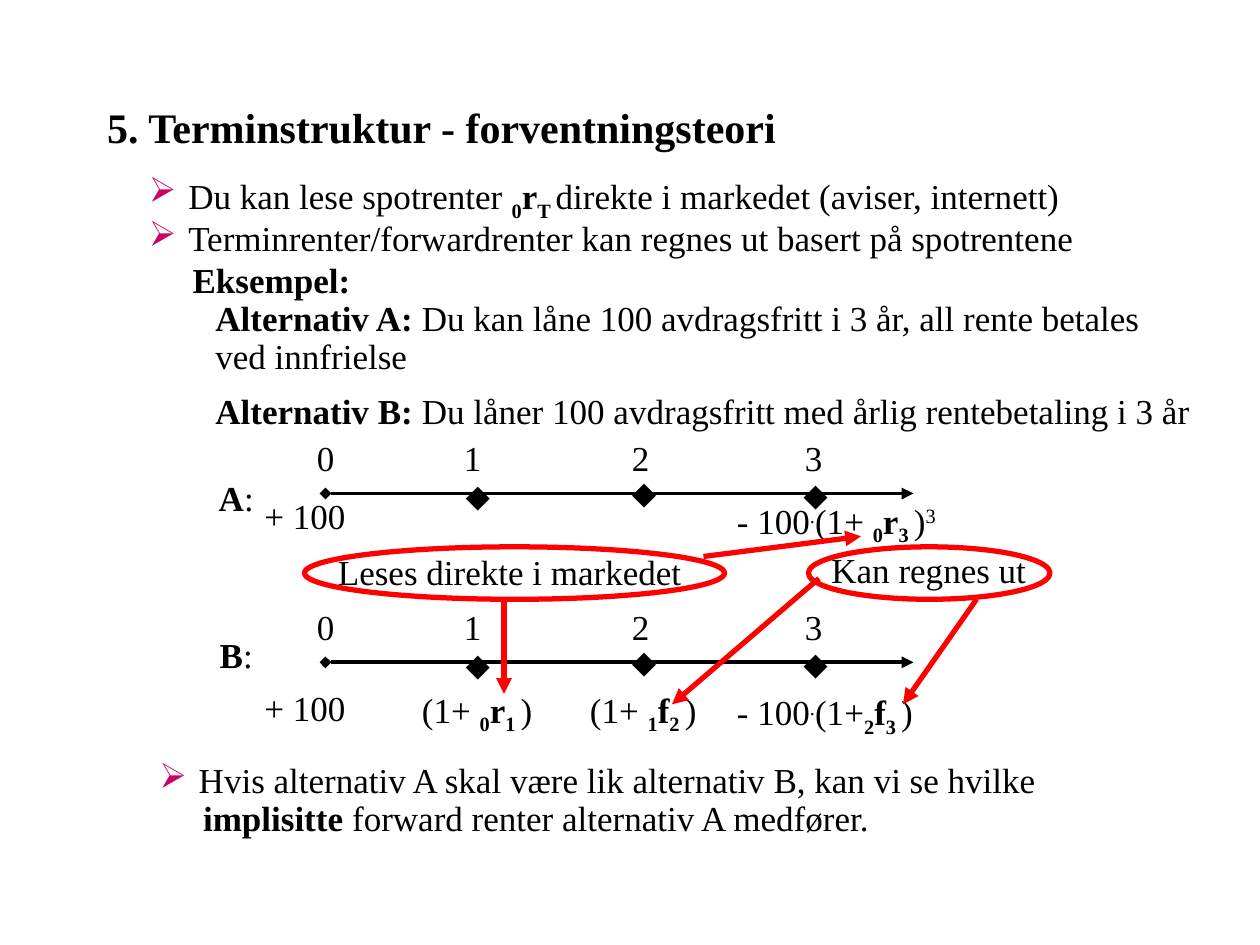
from lxml.etree import SubElement
from pptx import Presentation
from pptx.dml.color import RGBColor
from pptx.enum.shapes import MSO_CONNECTOR, MSO_SHAPE
from pptx.enum.text import MSO_ANCHOR, MSO_AUTO_SIZE, PP_ALIGN
from pptx.oxml.ns import qn
from pptx.util import Pt

BLACK = RGBColor(0x00, 0x00, 0x00)
RED = RGBColor(0xFF, 0x00, 0x00)
MAGENTA = RGBColor(0xCC, 0x00, 0x66)
SERIF, SANS = "Times New Roman", "Arial"

# Run styles: b = bold, - = subscript, + = superscript
BASELINE = {"-": "-25000", "+": "30000"}


def rate(start, letter, end):
    return [(start, "b-"), (letter, "b"), (end + " ", "b-"), (")", "")]


# Content: a paragraph is a list of (text, style) runs
TITLE = "5. Terminstruktur - forventningsteori"
INTRO = [
    [("Du kan lese spotrenter ", ""), ("0", "b-"), ("r", "b"), ("T ", "b-"),
     ("direkte i markedet (aviser, internett)", "")],
    [("Terminrenter/forwardrenter kan regnes ut basert på spotrentene", "")],
    [("Eksempel:", "b")],
]
ALTERNATIVES = [
    [("Alternativ A:", "b"),
     (" Du kan låne 100 avdragsfritt i 3 år, all rente betales ved innfrielse", "")],
    [("Alternativ B:", "b"),
     (" Du låner 100 avdragsfritt med årlig rentebetaling i 3 år", "")],
]
CONCLUSION = [
    [("Hvis alternativ A skal være lik alternativ B, kan vi se hvilke", "")],
    [("implisitte", "b"), (" forward renter alternativ A medfører.", "")],
]
REPAYMENT = [("- 100", ""), (".", "+")]
# Cash flows: left, top, width, runs
CASH_FLOWS = [
    (144, 282, 84, [("+ 100", "")]),
    (414, 282, 162, REPAYMENT + [("(1+ ", "")] + rate("0", "r", "3") + [("3", "+")]),
    (144, 391.5, 84, [("+ 100", "")]),
    (234, 390, 84, [("(1+ ", "")] + rate("0", "r", "1")),
    (330, 390, 84, [("(1+ ", "")] + rate("1", "f", "2")),
    (414, 391.5, 162, REPAYMENT + [("(1+", "")] + rate("2", "f", "3")),
]
# Timelines: name, top of name, top of year numbers
TIMELINES = [("A", 268.5, 246), ("B", 358.5, 342.5)]
# Years: number, left, width, alignment
YEARS = [
    ("0", 174, 36, PP_ALIGN.LEFT),
    ("1", 258, 36, PP_ALIGN.LEFT),
    ("2", 354, 36, PP_ALIGN.LEFT),
    ("3", 432, 66, PP_ALIGN.CENTER),
]
# Diamonds: left, drop below the year numbers
DIAMONDS = [(259, 21), (354, 19.5), (452, 20.5)]
# Callouts: text, text box (left, top, width), oval (left, width), arrows
CALLOUTS = [
    ("Leses direkte i markedet", (186, 314, 228), (174, 240),
     [(288, 342.5, 288, 396.5), (402, 318, 492, 306.5)]),
    ("Kan regnes ut", (468, 312.5, 132), (462, 138),
     [(558, 342.5, 516, 402.5), (468, 330.5, 384, 402.5)]),
]

prs = Presentation()
prs.slide_width, prs.slide_height = Pt(720), Pt(540)
slide = prs.slides.add_slide(prs.slide_layouts[5])


def apply(target, values):
    for name, value in values.items():
        setattr(target, name, value)


def write(paragraph, runs, size=20, font=SERIF):
    for text, style in runs:
        run = paragraph.add_run()
        run.text = text
        apply(run.font, {"name": font, "size": Pt(size), "bold": "b" in style})
        run.font.color.rgb = BLACK
        for mark, offset in BASELINE.items():
            if mark in style:
                run._r.get_or_add_rPr().set("baseline", offset)


def indent(paragraph, left, first=0):
    props = paragraph._p.get_or_add_pPr()
    props.set("marL", str(Pt(left)))
    props.set("indent", str(Pt(first)))
    return props


def add_bullet(paragraph):
    props = indent(paragraph, 22.5, -22.5)
    colour = SubElement(props, qn("a:buClr"))
    SubElement(colour, qn("a:srgbClr")).set("val", str(MAGENTA))
    SubElement(props, qn("a:buChar")).set("char", "➢")


def add_text(left, top, width, height, paragraphs, spacing=0.9, gap=0,
             align=PP_ALIGN.LEFT, font=SERIF, bullets=0):
    box = slide.shapes.add_textbox(Pt(left), Pt(top), Pt(width), Pt(height))
    frame = box.text_frame
    apply(frame, {"word_wrap": True, "auto_size": MSO_AUTO_SIZE.SHAPE_TO_FIT_TEXT})
    for i, runs in enumerate(paragraphs):
        paragraph = frame.add_paragraph() if i else frame.paragraphs[0]
        if i < bullets:
            add_bullet(paragraph)
        elif bullets:
            indent(paragraph, 25)
        apply(paragraph, {"line_spacing": spacing, "alignment": align,
                          "space_before": Pt(gap if i else 0)})
        write(paragraph, runs, font=font)


def add_line(x1, y1, x2, y2, colour, width, head=None):
    line = slide.shapes.add_connector(
        MSO_CONNECTOR.STRAIGHT, Pt(x1), Pt(y1), Pt(x2), Pt(y2))
    line.line.color.rgb = colour
    line.line.width = Pt(width)
    ln = line.line._get_or_add_ln()
    if head:
        SubElement(ln, qn("a:headEnd")).set("type", head)
    SubElement(ln, qn("a:tailEnd")).set("type", "triangle")
    SubElement(line._element.spPr, qn("a:effectLst"))


# Title
title = slide.shapes.title
apply(title, {"left": Pt(54), "top": Pt(54.5), "width": Pt(582), "height": Pt(42)})
apply(title.text_frame, {"word_wrap": True, "auto_size": MSO_AUTO_SIZE.NONE,
                         "vertical_anchor": MSO_ANCHOR.TOP})
heading = title.text_frame.paragraphs[0]
heading.alignment = PP_ALIGN.LEFT
write(heading, [(TITLE, "b")], size=24)

# Body text
add_text(78, 96.5, 582, 77, INTRO, gap=2, bullets=2)
add_text(116, 168.5, 574, 84, ALTERNATIVES, gap=10)
add_text(84, 432.5, 582, 50, CONCLUSION, bullets=1)

# Timelines
for name, name_top, years_top in TIMELINES:
    add_text(102, name_top, 66, 31, [[(name, "b"), (":", "")]],
             spacing=1, align=PP_ALIGN.CENTER)
    axis = years_top + 36
    add_line(186, axis, 522, axis, BLACK, 2.25, head="diamond")
    for year, left, width, align in YEARS:
        add_text(left, years_top, width, 31, [[(year, "")]], spacing=1, align=align)
    for left, drop in DIAMONDS:
        add_text(left, years_top + drop, 23, 31, [[("⬥", "")]], spacing=1, font=SANS)

# Cash flows
for left, top, width, runs in CASH_FLOWS:
    add_text(left, top, width, 29, [runs])

# Callouts with ovals and arrows
for text, (left, top, width), (oval_left, oval_width), arrows in CALLOUTS:
    add_text(left, top, width, 29, [[(text, "")]])
    oval = slide.shapes.add_shape(
        MSO_SHAPE.OVAL, Pt(oval_left), Pt(312.5), Pt(oval_width), Pt(30))
    oval.shadow.inherit = False
    oval.fill.background()
    oval.line.color.rgb = RED
    oval.line.width = Pt(3)
    for ends in arrows:
        add_line(*ends, RED, 3)

prs.save("out.pptx")
